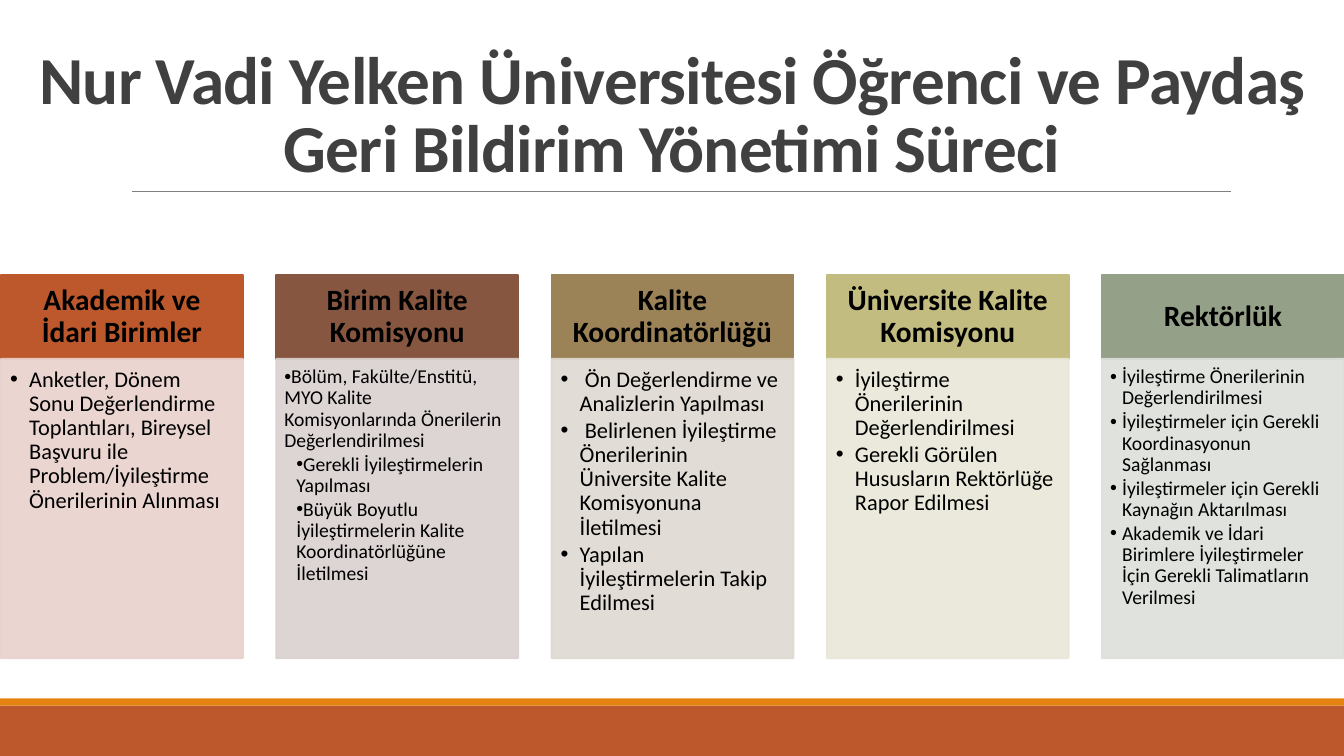
from dataclasses import dataclass

from lxml import etree
from pptx import Presentation
from pptx import util as u
from pptx.dml.color import RGBColor
from pptx.enum import shapes, text
from pptx.oxml.ns import qn

COLORS = {
    "rust": "BD582C", "orange": "E48312", "rule": "808080",
    "title": "404040", "text": "000000",
}
FONT = "Calibri"
SLIDE_WIDTH, SLIDE_HEIGHT = 13.33, 7.5

# Column geometry, in inches
FIRST_LEFT, COLUMN_STEP, COLUMN_WIDTH = 0.01, 2.73, 2.4
HEADER_TOP, HEADER_HEIGHT, BODY_HEIGHT = 2.73, 0.83, 2.97


@dataclass(frozen=True)
class BulletStyle:
    size: int
    margins: tuple  # left, top, right, bottom
    indent: float
    hanging: bool = True


@dataclass(frozen=True)
class Unit:
    name: str
    header_color: str
    body_color: str
    style: BulletStyle
    tasks: tuple


LARGE = BulletStyle(16, (0.09, 0.09, 0.12, 0.14), 0.19)
SMALL = BulletStyle(14, (0.08, 0.08, 0.11, 0.12), 0.12)
FLUSH = BulletStyle(14, (0.08, 0.08, 0.11, 0.12), 0.12, hanging=False)
HEADER_MARGINS = (0.16, 0.09, 0.16, 0.09)

UNITS = (
    Unit("Akademik ve İdari Birimler", "BD582C", "E8D1CD", LARGE, (
        "Anketler, Dönem Sonu Değerlendirme Toplantıları, Bireysel Başvuru ile "
        "Problem/İyileştirme Önerilerinin Alınması",)),
    Unit("Birim Kalite Komisyonu", "865640", "D9D1CF", FLUSH, (
        "Bölüm, Fakülte/Enstitü, MYO Kalite Komisyonlarında Önerilerin Değerlendirilmesi",
        "Gerekli İyileştirmelerin Yapılması",
        "Büyük Boyutlu İyileştirmelerin Kalite Koordinatörlüğüne İletilmesi")),
    Unit("Kalite Koordinatörlüğü", "9B8357", "DED9D1", LARGE, (
        " Ön Değerlendirme ve Analizlerin Yapılması",
        " Belirlenen İyileştirme Önerilerinin Üniversite Kalite Komisyonuna İletilmesi",
        "Yapılan İyileştirmelerin Takip Edilmesi")),
    Unit("Üniversite Kalite Komisyonu", "C2BC80", "E9E7D8", LARGE, (
        "İyileştirme Önerilerinin Değerlendirilmesi",
        "Gerekli Görülen Hususların Rektörlüğe Rapor Edilmesi")),
    Unit("Rektörlük", "94A088", "DCDFDA", SMALL, (
        "İyileştirme Önerilerinin Değerlendirilmesi",
        "İyileştirmeler için Gerekli Koordinasyonun Sağlanması",
        "İyileştirmeler için Gerekli Kaynağın Aktarılması",
        "Akademik ve İdari Birimlere İyileştirmeler İçin Gerekli Talimatların Verilmesi")),
)


def apply(target, values: dict) -> None:
    for attribute, value in values.items():
        setattr(target, attribute, value)


def add_box(slide, left: float, top: float, width: float, height: float,
            color: str, outlined: bool = False, alpha: int = 100):
    box = slide.shapes.add_shape(
        shapes.MSO_SHAPE.RECTANGLE,
        u.Inches(left), u.Inches(top), u.Inches(width), u.Inches(height))
    box.shadow.inherit = False
    box.fill.solid()
    box.fill.fore_color.rgb = RGBColor.from_string(color)
    if outlined:
        box.line.color.rgb = RGBColor.from_string(color)
        box.line.width = u.Pt(1.25)
    else:
        box.line.fill.background()
    if alpha < 100:
        for rgb in box._element.spPr.iter(qn("a:srgbClr")):
            etree.SubElement(rgb, qn("a:alpha"), val=str(alpha * 1000))
    return box


def format_frame(frame, margins: tuple, anchor) -> None:
    sides = ("margin_left", "margin_top", "margin_right", "margin_bottom")
    apply(frame, dict(zip(sides, map(u.Inches, margins))))
    apply(frame, {"word_wrap": True, "vertical_anchor": anchor,
                  "auto_size": text.MSO_AUTO_SIZE.NONE})


def write(paragraph, wording: str, size: int, color: str, bold: bool = False,
          align=text.PP_ALIGN.CENTER, spacing: float = 0.9, after: float = 0):
    apply(paragraph, {"alignment": align, "line_spacing": spacing,
                      "space_before": u.Pt(0), "space_after": u.Pt(after)})
    run = paragraph.add_run()
    run.text = wording
    apply(run.font, {"name": FONT, "size": u.Pt(size), "bold": bold})
    run.font.color.rgb = RGBColor.from_string(color)
    return run


def add_bullet(paragraph, left: float, first_line: float) -> None:
    properties = paragraph._p.get_or_add_pPr()
    properties.set("marL", str(u.Inches(left)))
    properties.set("indent", str(u.Inches(first_line)))
    etree.SubElement(properties, qn("a:buFont"), typeface="Arial")
    etree.SubElement(properties, qn("a:buChar"), char="•")


def add_column(slide, unit: Unit, left: float) -> None:
    # Header with the unit's name
    header = add_box(slide, left, HEADER_TOP, COLUMN_WIDTH, HEADER_HEIGHT,
                     unit.header_color, outlined=True)
    format_frame(header.text_frame, HEADER_MARGINS, text.MSO_ANCHOR.MIDDLE)
    write(header.text_frame.paragraphs[0], unit.name, 21, COLORS["text"], bold=True)

    # Body with the unit's tasks
    body = add_box(slide, left, HEADER_TOP + HEADER_HEIGHT, COLUMN_WIDTH, BODY_HEIGHT,
                   unit.body_color, outlined=True, alpha=90)
    frame, style = body.text_frame, unit.style
    format_frame(frame, style.margins, text.MSO_ANCHOR.TOP)
    for index, task in enumerate(unit.tasks):
        paragraph = frame.add_paragraph() if index else frame.paragraphs[0]
        paragraph.level = 1
        write(paragraph, task, style.size, COLORS["text"],
              align=text.PP_ALIGN.LEFT, after=2)
        if style.hanging:
            add_bullet(paragraph, style.indent, -style.indent)
        else:
            add_bullet(paragraph, style.indent if index else 0, 0)


def add_title(slide) -> None:
    title = slide.shapes.title
    apply(title, {"left": u.Inches(0), "top": u.Inches(0.31),
                  "width": u.Inches(SLIDE_WIDTH), "height": u.Inches(1.59)})
    format_frame(title.text_frame, (0.1, 0.05, 0.1, 0.05), text.MSO_ANCHOR.BOTTOM)
    run = write(title.text_frame.paragraphs[0],
                "Nur Vadi Yelken Üniversitesi Öğrenci ve Paydaş "
                "Geri Bildirim Yönetimi Süreci",
                48, COLORS["title"], bold=True, spacing=0.85)
    run.font._element.set("spc", "-50")


def add_rule(slide) -> None:
    rule = slide.shapes.add_connector(
        shapes.MSO_CONNECTOR.STRAIGHT,
        u.Inches(1.31), u.Inches(1.9), u.Inches(12.21), u.Inches(1.9))
    rule.line.color.rgb = RGBColor.from_string(COLORS["rule"])
    rule.line.width = u.Pt(0.5)
    etree.SubElement(rule._element.spPr, qn("a:effectLst"))


def main() -> None:
    deck = Presentation()
    apply(deck, {"slide_width": u.Inches(SLIDE_WIDTH),
                 "slide_height": u.Inches(SLIDE_HEIGHT)})
    slide = deck.slides.add_slide(deck.slide_layouts[5])

    # Footer bands
    add_box(slide, 0, 7, SLIDE_WIDTH, 0.5, COLORS["rust"])
    add_box(slide, 0, 6.93, SLIDE_WIDTH, 0.07, COLORS["orange"])

    # Title and its rule
    add_rule(slide)
    add_title(slide)

    # Process columns
    for index, unit in enumerate(UNITS):
        add_column(slide, unit, FIRST_LEFT + index * COLUMN_STEP)

    deck.save("out.pptx")


if __name__ == "__main__":
    main()
